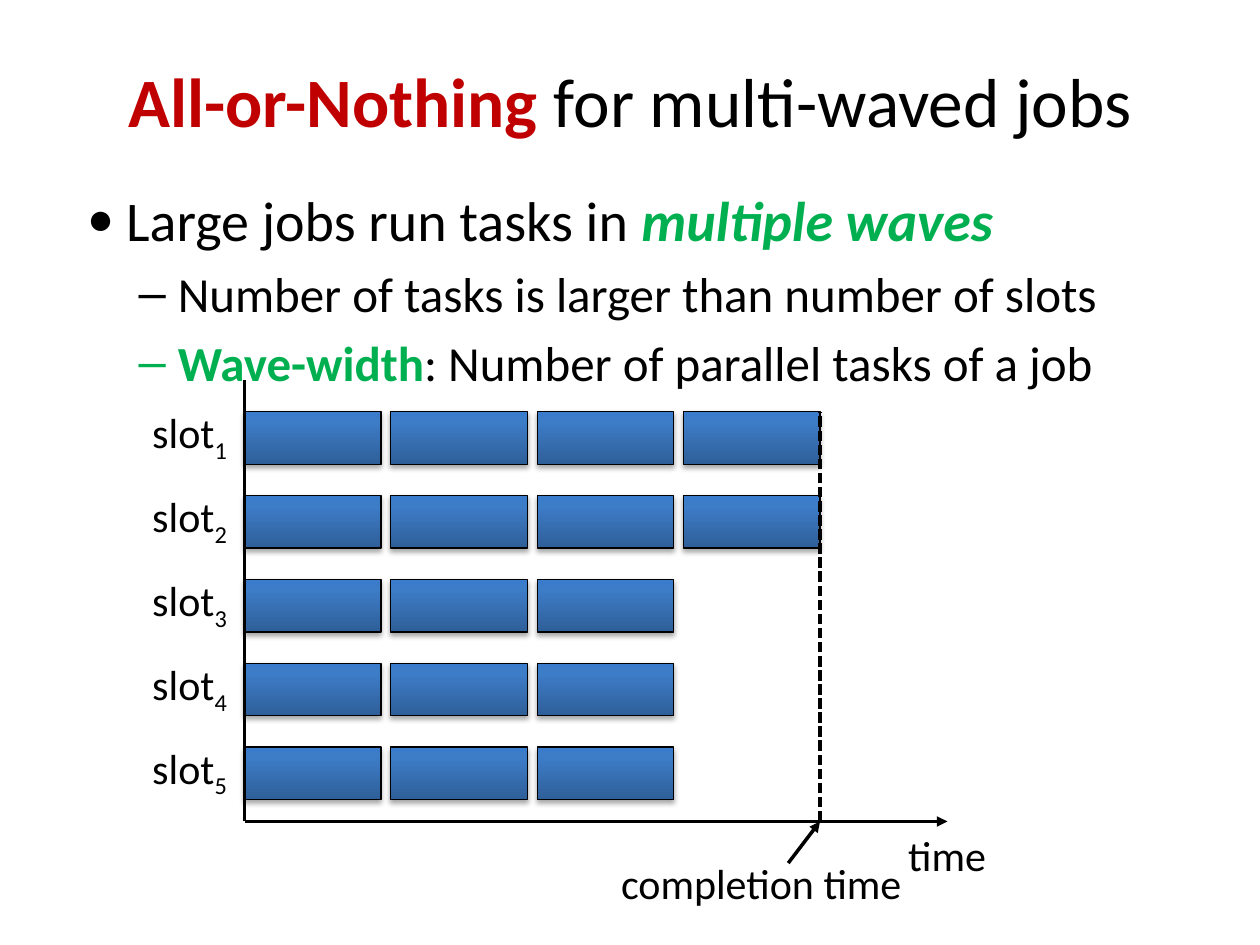
from lxml.etree import SubElement
from pptx import Presentation
from pptx.dml.color import RGBColor
from pptx.enum.dml import MSO_LINE_DASH_STYLE as DASH
from pptx.enum.shapes import MSO_CONNECTOR as CONN, MSO_SHAPE as SHAPE
from pptx.enum.text import MSO_ANCHOR as ANCHOR, MSO_AUTO_SIZE as FIT, PP_ALIGN as ALIGN
from pptx.oxml.ns import qn
from pptx.util import Cm, Pt

BLACK, RED, GREEN = "000000", "C00000", "00B050"
TITLE = [("All-or-Nothing", RED, "b"), (" for multi-waved jobs", BLACK, "")]
BULLETS = [
    (0, "●", 32, [("Large jobs run tasks in ", BLACK, ""), ("multiple waves", GREEN, "bi")]),
    (1, "–", 28, [("Number of tasks is larger than number of slots", BLACK, "")]),
    (1, "–", 28, [("Wave-width", GREEN, "b"), (": Number of parallel tasks of a job", BLACK, "")]),
]
INDENTS = [1.02, 2.06]
HANGING = 0.79
TASKS_PER_SLOT = [4, 4, 3, 3, 3]
GRADIENT = [(0, "2F5F99"), (80, "3D7CC7"), (100, "3A7CCB")]
LEFT, TOP, COL_STEP, ROW_STEP = 4.93, 8.3, 2.95, 1.69
TASK_W, TASK_H = 2.75, 1.06
AXIS_TOP, AXIS_Y, AXIS_END = 7.67, 16.56, 19.1
DONE_X = LEFT + 3 * COL_STEP + TASK_W
LABELS = [("time", 18.06, 16.59, 2.11), ("completion time", 12.27, 17.17, 6.22)]


def color(value):
    return RGBColor.from_string(value)


def add_run(p, text, size, rgb=BLACK, style=""):
    r = p.add_run()
    r.text = text
    r.font.name, r.font.size = "Calibri", Pt(size)
    r.font.color.rgb = color(rgb)
    r.font.bold, r.font.italic = "b" in style, "i" in style
    return r


def place(sp, x, y, w, h):
    sp.left, sp.top, sp.width, sp.height = Cm(x), Cm(y), Cm(w), Cm(h)


def add_node(parent, tag, **attrs):
    return SubElement(parent, qn(tag), {k: str(v) for k, v in attrs.items()})


def add_bullet(p, char, level):
    pPr = p._p.get_or_add_pPr()
    pPr.set("marL", str(Cm(INDENTS[level])))
    pPr.set("indent", str(-Cm(HANGING)))
    if level == 0:
        add_node(pPr, "a:buSzPct", val=80000)
    add_node(pPr, "a:buChar", char=char)


def add_label(s, text, x, y, w, sub=""):
    tf = s.shapes.add_textbox(Cm(x), Cm(y), Cm(w), Cm(1.27)).text_frame
    tf.word_wrap, tf.auto_size = False, FIT.SHAPE_TO_FIT_TEXT
    p = tf.paragraphs[0]
    add_run(p, text, 24)
    if sub:
        add_run(p, sub, 24).font._element.set("baseline", "-25000")


def add_task(s, x, y):
    sp = s.shapes.add_shape(SHAPE.RECTANGLE, Cm(x), Cm(y), Cm(TASK_W), Cm(TASK_H))
    sp.line.color.rgb, sp.line.width = color(BLACK), Pt(0.75)
    sp.shadow.inherit = False
    spPr = sp._element.spPr
    grad = add_node(spPr, "a:gradFill", rotWithShape=1)
    stops = add_node(grad, "a:gsLst")
    for pos, rgb in GRADIENT:
        add_node(add_node(stops, "a:gs", pos=pos * 1000), "a:srgbClr", val=rgb)
    add_node(grad, "a:lin", ang=270 * 60000, scaled=0)
    spPr.find(qn("a:ln")).addprevious(grad)
    shadow = add_node(spPr.find(qn("a:effectLst")), "a:outerShdw", blurRad=Pt(3.1),
                      dist=Pt(1.8), dir=90 * 60000, rotWithShape=0)
    add_node(add_node(shadow, "a:srgbClr", val=BLACK), "a:alpha", val=35000)


def add_line(s, x1, y1, x2, y2, dashed=False, arrow=False):
    ln = s.shapes.add_connector(CONN.STRAIGHT, Cm(x1), Cm(y1), Cm(x2), Cm(y2))
    ln.line.color.rgb, ln.line.width = color(BLACK), Pt(2)
    if dashed:
        ln.line.dash_style = DASH.SQUARE_DOT
    if arrow:
        add_node(ln.line._get_or_add_ln(), "a:tailEnd", type="triangle")
    add_node(ln._element.spPr, "a:effectLst")


def main():
    """Build the slide on multi-waved jobs and save it."""
    prs = Presentation()
    prs.slide_width, prs.slide_height = Cm(25.4), Cm(19.05)
    s = prs.slides.add_slide(prs.slide_layouts[1])

    title, body = s.placeholders
    place(title, 1.27, 0.43, 22.86, 3.18)
    tf = title.text_frame
    tf.vertical_anchor, tf.auto_size = ANCHOR.MIDDLE, FIT.NONE
    tf.paragraphs[0].alignment = ALIGN.CENTER
    for text, rgb, style in TITLE:
        add_run(tf.paragraphs[0], text, 39.6, rgb, style)

    place(body, 1.27, 3.61, 22.86, 4.17)
    tf = body.text_frame
    tf.auto_size = FIT.NONE
    for i, (level, char, size, runs) in enumerate(BULLETS):
        p = tf.add_paragraph() if i else tf.paragraphs[0]
        p.level, p.space_before = level, Pt(6)
        add_bullet(p, char, level)
        for text, rgb, style in runs:
            add_run(p, text, size, rgb, style)

    for row, tasks in enumerate(TASKS_PER_SLOT):
        y = TOP + row * ROW_STEP
        for col in range(tasks):
            add_task(s, LEFT + col * COL_STEP, y)
        add_label(s, "slot", 2.82, y - 0.22, 2.06, str(row + 1))
    for label in LABELS:
        add_label(s, *label)

    add_line(s, DONE_X, AXIS_Y, DONE_X, TOP, dashed=True)
    add_line(s, DONE_X - 0.64, AXIS_Y + 0.84, DONE_X, AXIS_Y, arrow=True)
    add_line(s, LEFT, AXIS_Y, LEFT, AXIS_TOP)
    add_line(s, LEFT, AXIS_Y, AXIS_END, AXIS_Y, arrow=True)
    prs.save("out.pptx")


if __name__ == "__main__":
    main()
